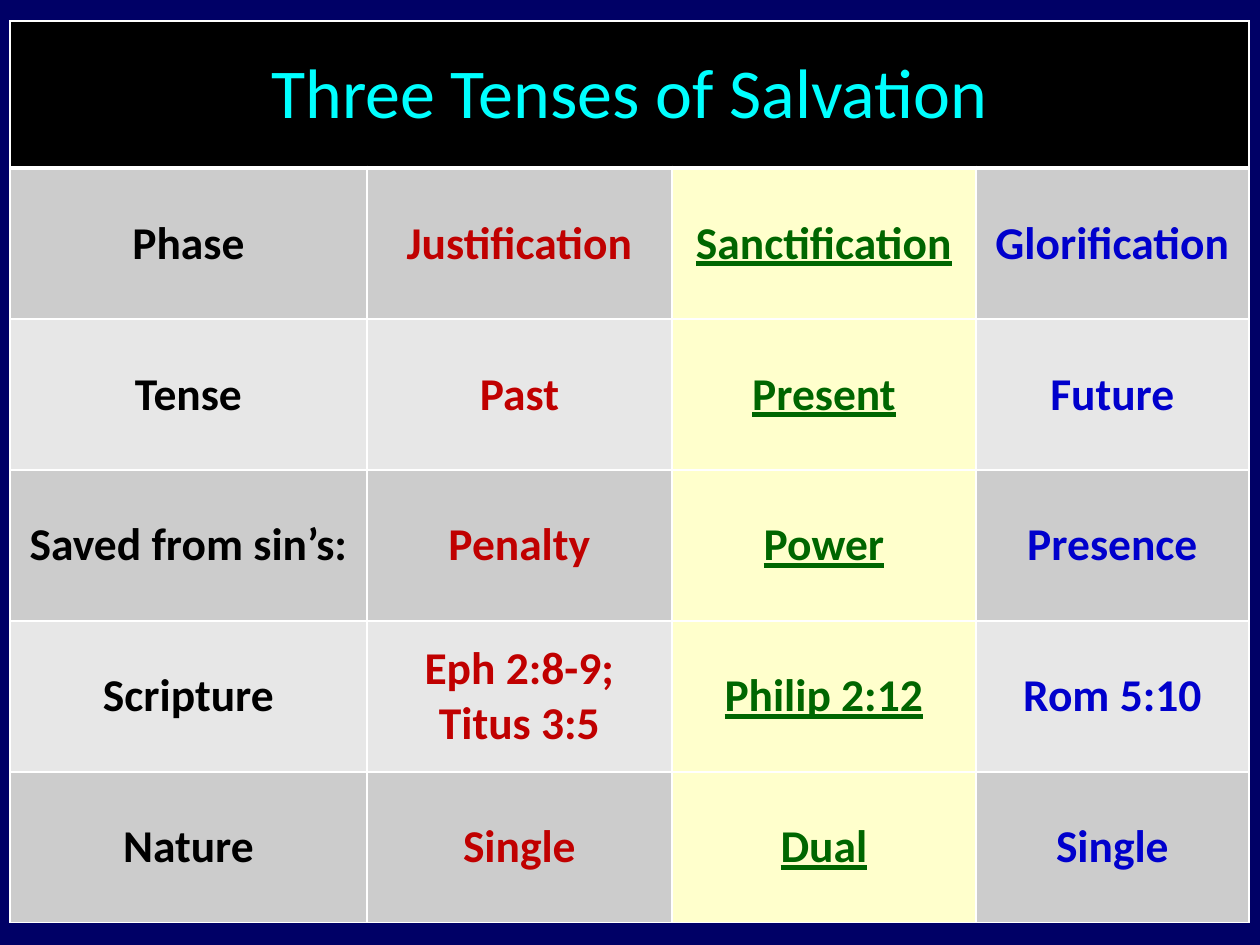
from lxml.etree import SubElement
from pptx import Presentation
from pptx.dml.color import RGBColor
from pptx.enum.text import MSO_ANCHOR as Anchor, PP_ALIGN as Align
from pptx.oxml.ns import qn
from pptx.util import Pt

EMU_PER_PX = 914400 / 126
COLUMN_WIDTHS = [357, 305, 304, 273]
TITLE_HEIGHT, ROW_HEIGHT = 147, 151
COLUMN_COLORS = ["000000", "C00000", "006600", "0000CC"]
HIGHLIGHT_COLUMN = 2
BAND_FILLS = ["CCCCCC", "E7E7E7"]
ROWS = [
    ["Phase", "Justification", "Sanctification", "Glorification"],
    ["Tense", "Past", "Present", "Future"],
    ["Saved from sin’s:", "Penalty", "Power", "Presence"],
    ["Scripture", "Eph 2:8-9; Titus 3:5", "Philip 2:12", "Rom 5:10"],
    ["Nature", "Single", "Dual", "Single"],
]


def px(length):
    return round(length * EMU_PER_PX)


def color(value):
    return RGBColor.from_string(value)


class SlideBuilder:
    font = "Calibri"
    border_color = "FFFFFF"

    def __init__(self, presentation, background):
        self.slide = presentation.slides.add_slide(presentation.slide_layouts[6])
        fill = self.slide.background.fill
        fill.solid()
        fill.fore_color.rgb = color(background)

    def table(self, left, top, widths, heights):
        frame = self.slide.shapes.add_table(
            len(heights), len(widths), px(left), px(top), px(sum(widths)), px(sum(heights)))
        table = frame.table
        table.first_row = table.horz_banding = False
        for column, width in zip(table.columns, widths):
            column.width = px(width)
        for row, height in zip(table.rows, heights):
            row.height = px(height)
        return table

    def borders(self, cell, top=1, bottom=1):
        """Draw the four cell borders; widths are in points."""
        properties = cell._tc.get_or_add_tcPr()
        for side, width in (("L", 1), ("R", 1), ("T", top), ("B", bottom)):
            line = SubElement(properties, qn(f"a:ln{side}"), w=str(Pt(width)))
            solid = SubElement(line, qn("a:solidFill"))
            SubElement(solid, qn("a:srgbClr"), val=self.border_color)

    def cell(self, cell, text, fill, text_color, size, bold=True, underline=False):
        cell.fill.solid()
        cell.fill.fore_color.rgb = color(fill)
        cell.vertical_anchor = Anchor.MIDDLE
        paragraph = cell.text_frame.paragraphs[0]
        paragraph.alignment = Align.CENTER
        run = paragraph.add_run()
        run.text = text
        font = run.font
        font.name, font.size = self.font, Pt(size)
        font.bold, font.underline = bold, underline
        font.color.rgb = color(text_color)


def main():
    presentation = Presentation()
    presentation.slide_width, presentation.slide_height = px(1260), px(945)
    builder = SlideBuilder(presentation, "000066")
    heights = [TITLE_HEIGHT] + [ROW_HEIGHT] * len(ROWS)
    table = builder.table(10, 21, COLUMN_WIDTHS, heights)

    title = table.cell(0, 0)
    title.merge(table.cell(0, len(COLUMN_WIDTHS) - 1))
    for column in range(len(COLUMN_WIDTHS)):
        builder.borders(table.cell(0, column), bottom=3)
    builder.cell(title, "Three Tenses of Salvation", "000000", "00FFFF", 40, bold=False)

    for row, texts in enumerate(ROWS):
        for column, text in enumerate(texts):
            cell = table.cell(row + 1, column)
            highlighted = column == HIGHLIGHT_COLUMN
            fill = "FFFFCC" if highlighted else BAND_FILLS[row % 2]
            builder.borders(cell, top=3 if row == 0 else 1)
            builder.cell(cell, text, fill, COLUMN_COLORS[column], 26, underline=highlighted)

    presentation.save("out.pptx")


if __name__ == "__main__":
    main()
